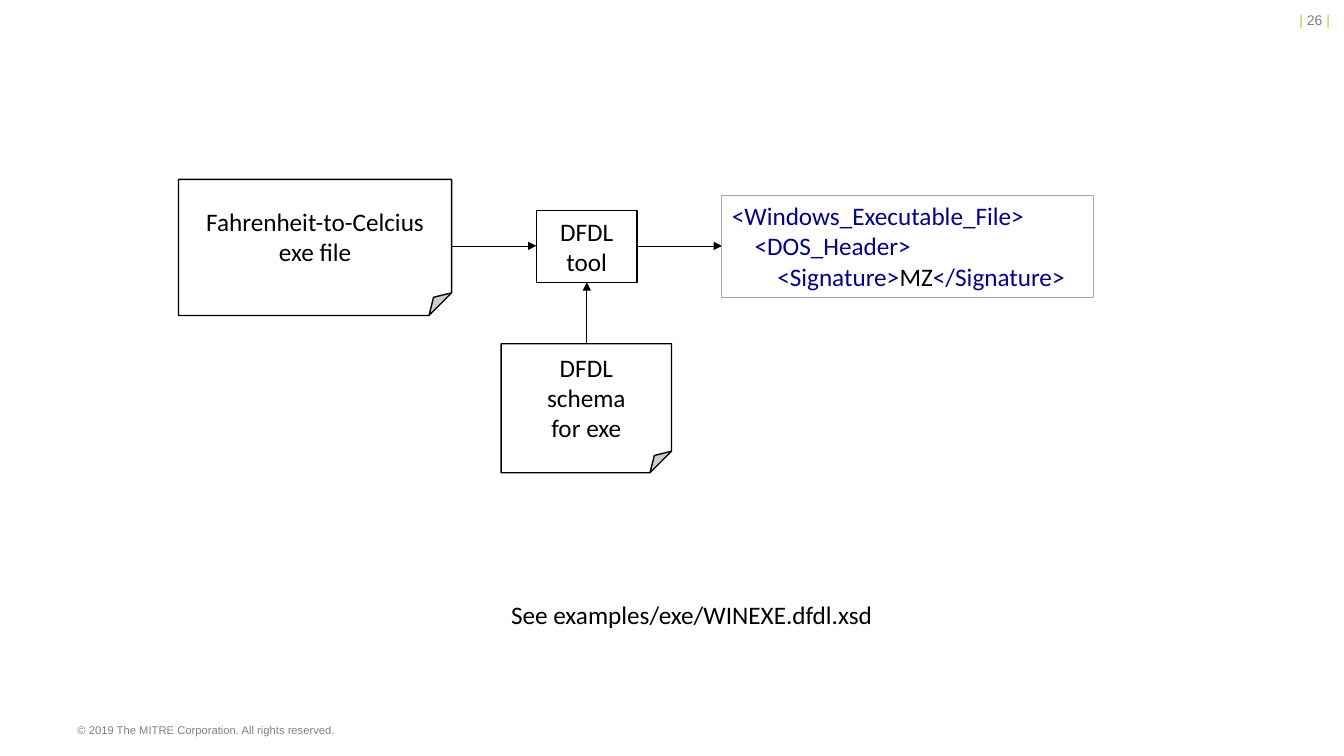
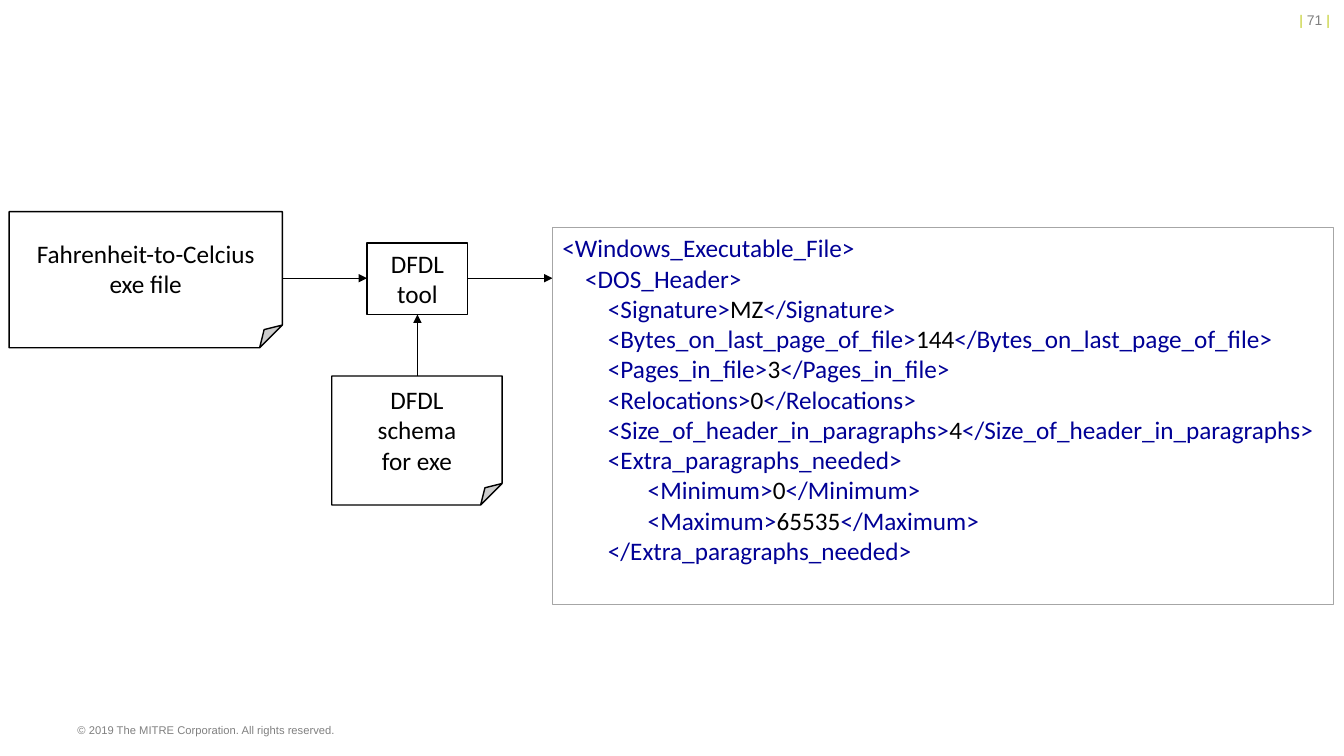
from typing import NamedTuple

from lxml import etree
from pptx import Presentation
from pptx.dml.color import RGBColor
from pptx.enum import shapes, text
from pptx.oxml import ns
from pptx.util import Inches, Pt

# Shared look
BLACK = RGBColor(0x00, 0x00, 0x00)
WHITE = RGBColor(0xFF, 0xFF, 0xFF)
TAG_BLUE = RGBColor(0x00, 0x00, 0x96)
BORDER_GREY = RGBColor(0xA6, 0xA6, 0xA6)
FOOTER_GREY = RGBColor(0x80, 0x80, 0x80)
LIME = RGBColor(0xC1, 0xCD, 0x23)
BODY = {"name": "Calibri", "size": Pt(18)}
PAGE_NUMBER = {"name": "Arial", "size": Pt(10)}
FOOTER = {"name": "Arial", "size": Pt(8)}
COPYRIGHT = "© 2019 The MITRE Corporation. All rights reserved."


class Run(NamedTuple):
    text: str
    color: RGBColor = BLACK


class Box(NamedTuple):
    left: float
    top: float
    width: float
    height: float

    def moved(self, right: float, down: float) -> "Box":
        return self._replace(left=self.left + right, top=self.top + down)

    def lengths(self) -> list:
        return [Inches(value) for value in self]


class Node(NamedTuple):
    kind: shapes.MSO_SHAPE
    box: Box
    lines: tuple


class Arrow(NamedTuple):
    start: tuple
    end: tuple


class CodeLine(NamedTuple):
    indent: int
    tag: str
    value: str = ""

    def runs(self) -> list:
        opening = Run(f"{' ' * self.indent}<{self.tag}>", TAG_BLUE)
        if not self.value:
            return [opening]
        return [opening, Run(self.value), Run(f"</{self.tag}>", TAG_BLUE)]


class Page(NamedTuple):
    number: int
    offset: tuple
    code_size: tuple
    code: list
    caption: str = ""


# The diagram, placed as on the first page
NODES = [
    Node(shapes.MSO_SHAPE.FOLDED_CORNER, Box(1.77, 1.78, 2.71, 1.35),
         ("Fahrenheit-to-Celcius", "exe file")),
    Node(shapes.MSO_SHAPE.RECTANGLE, Box(5.32, 2.09, 1, 0.71), ("DFDL", "tool")),
    Node(shapes.MSO_SHAPE.FOLDED_CORNER, Box(4.97, 3.41, 1.69, 1.28),
         ("DFDL", "schema", "for exe")),
]
ARROWS = [
    Arrow((4.48, 2.44), (5.32, 2.44)),
    Arrow((5.82, 3.41), (5.82, 2.8)),
    Arrow((6.32, 2.44), (7.16, 2.44)),
]
CODE_LEFT, CODE_TOP = 7.16, 1.94

HEADER_CODE = [
    CodeLine(0, "Windows_Executable_File"),
    CodeLine(4, "DOS_Header"),
    CodeLine(8, "Signature", "MZ"),
]
DETAIL_CODE = [
    CodeLine(8, "Bytes_on_last_page_of_file", "144"),
    CodeLine(8, "Pages_in_file", "3"),
    CodeLine(8, "Relocations", "0"),
    CodeLine(8, "Size_of_header_in_paragraphs", "4"),
    CodeLine(8, "Extra_paragraphs_needed"),
    CodeLine(15, "Minimum", "0"),
    CodeLine(15, "Maximum", "65535"),
    CodeLine(8, "/Extra_paragraphs_needed"),
]
PAGES = [
    Page(26, (0, 0), (3.69, 1.01), HEADER_CODE, "See examples/exe/WINEXE.dfdl.xsd"),
    Page(71, (-1.68, 0.32), (7.75, 3.74), HEADER_CODE + DETAIL_CODE),
]


def write(frame, lines: list, font: dict, align=text.PP_ALIGN.LEFT,
          anchor=text.MSO_ANCHOR.TOP, wrap: bool = True) -> None:
    """Fill a text frame with one paragraph for each list of runs."""
    frame.word_wrap = wrap
    frame.vertical_anchor = anchor
    for index, runs in enumerate(lines):
        paragraph = frame.add_paragraph() if index else frame.paragraphs[0]
        paragraph.alignment = align
        for item in runs:
            run = paragraph.add_run()
            run.text = item.text
            run.font.color.rgb = item.color
            for name, value in font.items():
                setattr(run.font, name, value)


def add_text(slide, box: Box, runs: list, font: dict, **layout):
    shape = slide.shapes.add_textbox(*box.lengths())
    write(shape.text_frame, [runs], font, **layout)
    return shape


def add_outlined(slide, kind, box: Box, color: RGBColor, width: float):
    shape = slide.shapes.add_shape(kind, *box.lengths())
    shape.shadow.inherit = False
    shape.line.color.rgb = color
    shape.line.width = Pt(width)
    return shape


def add_node(slide, node: Node, offset: tuple) -> None:
    shape = add_outlined(slide, node.kind, node.box.moved(*offset), BLACK, 1)
    shape.fill.solid()
    shape.fill.fore_color.rgb = WHITE
    write(shape.text_frame, [[Run(line)] for line in node.lines], BODY,
          align=text.PP_ALIGN.CENTER, anchor=text.MSO_ANCHOR.MIDDLE)


def add_arrow(slide, arrow: Arrow, offset: tuple) -> None:
    ends = [Inches(value + shift) for point in arrow
            for value, shift in zip(point, offset)]
    connector = slide.shapes.add_connector(shapes.MSO_CONNECTOR.STRAIGHT, *ends)
    connector.line.color.rgb = BLACK
    connector.line.width = Pt(0.5)
    properties = connector.element.spPr
    line = properties.find(ns.qn("a:ln"))
    etree.SubElement(line, ns.qn("a:tailEnd"), type="triangle")
    etree.SubElement(properties, ns.qn("a:effectLst"))


def add_code(slide, page: Page) -> None:
    box = Box(CODE_LEFT, CODE_TOP, *page.code_size).moved(*page.offset)
    shape = add_outlined(slide, shapes.MSO_SHAPE.RECTANGLE, box, BORDER_GREY, 0.75)
    shape.fill.background()
    write(shape.text_frame, [line.runs() for line in page.code], BODY)


def add_page(presentation, page: Page) -> None:
    slide = presentation.slides.add_slide(presentation.slide_layouts[6])

    # Page number
    number = [Run("| ", LIME), Run(f"{page.number} ", FOOTER_GREY), Run("|", LIME)]
    number_box = add_text(slide, Box(10.99, 0.07, 2.34, 0.27), number, PAGE_NUMBER,
                          align=text.PP_ALIGN.RIGHT)
    number_box.text_frame.margin_right = Inches(0.14)

    # Diagram
    for node in NODES:
        add_node(slide, node, page.offset)
    for arrow in ARROWS:
        add_arrow(slide, arrow, page.offset)
    add_code(slide, page)

    # Footer and caption
    add_text(slide, Box(0.67, 7.13, 8.24, 0.26), [Run(COPYRIGHT, FOOTER_GREY)], FOOTER)
    if page.caption:
        add_text(slide, Box(4.97, 5.9, 3.82, 0.4), [Run(page.caption)], BODY, wrap=False)


def main() -> None:
    presentation = Presentation()
    presentation.slide_width = Inches(13.33)
    presentation.slide_height = Inches(7.5)
    for page in PAGES:
        add_page(presentation, page)
    presentation.save("out.pptx")


if __name__ == "__main__":
    main()
